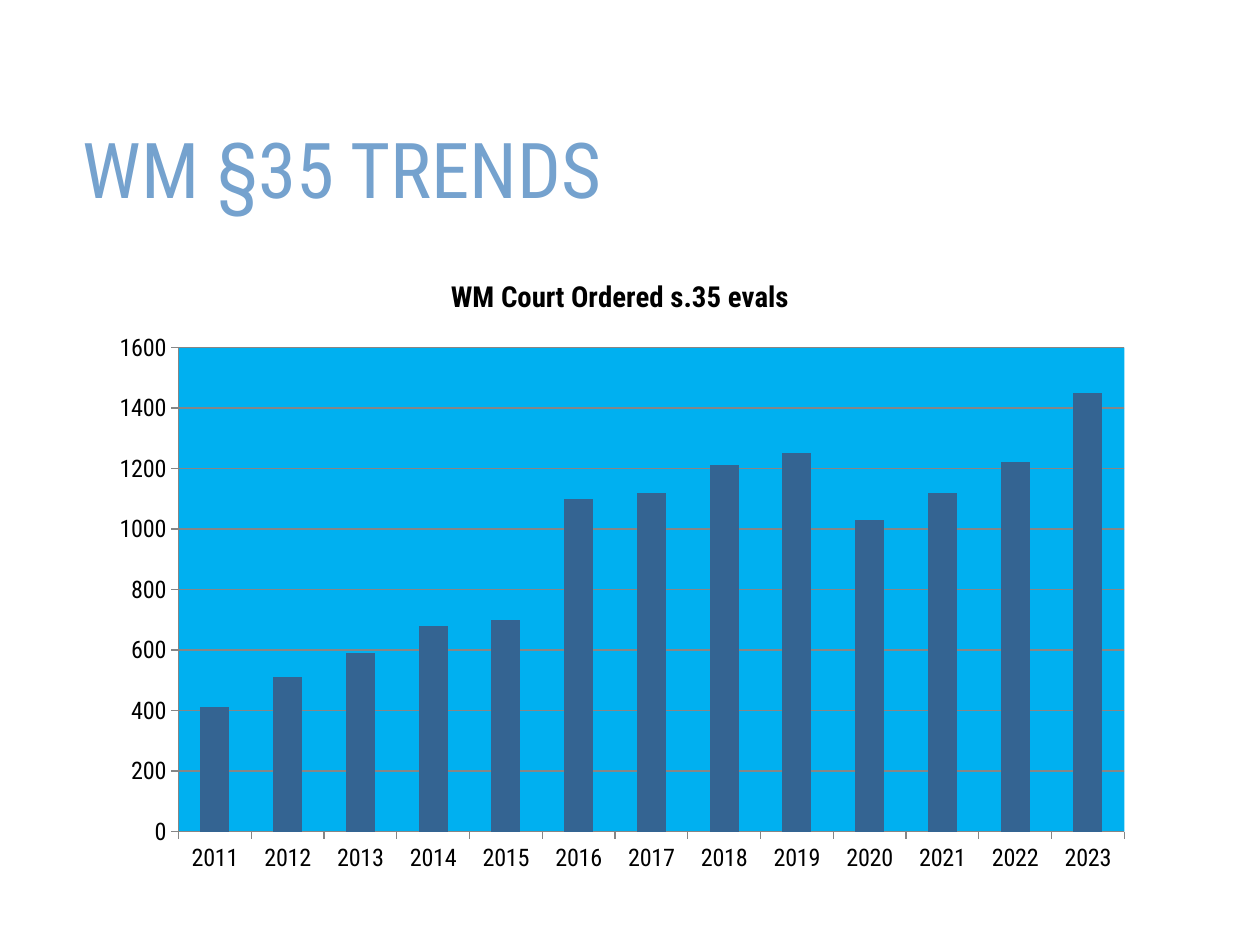
"""Build the WM §35 trends slide with its yearly column chart."""
from dataclasses import dataclass

from lxml import etree
from pptx import Presentation
from pptx.chart.axis import _BaseAxis
from pptx.chart.chart import Chart
from pptx.chart.data import CategoryChartData
from pptx.dml.color import RGBColor
from pptx.enum.chart import XL_CHART_TYPE, XL_TICK_MARK
from pptx.enum.text import MSO_ANCHOR
from pptx.oxml import parse_xml
from pptx.oxml.ns import nsdecls, qn
from pptx.slide import Slide
from pptx.util import Inches, Pt

COLUMNS = XL_CHART_TYPE.COLUMN_CLUSTERED
TICK_OUT = XL_TICK_MARK.OUTSIDE
TICK_NONE = XL_TICK_MARK.NONE
MIDDLE = MSO_ANCHOR.MIDDLE

FONT = "Roboto Condensed"
COLORS = {
    "heading": "75A2CE",
    "text": "000000",
    "plot": "00B0F0",
    "bars": "346492",
    "lines": "868686",
}
FIRST_YEAR = 2011
EVALS = (410, 510, 590, 680, 700, 1100, 1120, 1210, 1250, 1030, 1120, 1220, 1450)
PLOT_LAYOUT = {"x": 0.08, "y": 0.15, "w": 0.9, "h": 0.77}


@dataclass(frozen=True)
class Box:
    left: float
    top: float
    width: float
    height: float

    def lengths(self) -> tuple:
        return tuple(Inches(v) for v in (self.left, self.top, self.width, self.height))


@dataclass(frozen=True)
class TextStyle:
    size: float
    color: str
    bold: bool = False

    def apply(self, font) -> None:
        values = {"name": FONT, "size": Pt(self.size), "bold": self.bold}
        set_values(font, values)
        font.color.rgb = rgb(self.color)


HEADING = TextStyle(44, "heading")
CHART_TITLE = TextStyle(16.5, "text", True)
CHART_TEXT = TextStyle(13.8, "text")


def rgb(key: str) -> RGBColor:
    return RGBColor.from_string(COLORS[key])


def set_values(target, values: dict) -> None:
    for name, value in values.items():
        setattr(target, name, value)


def style_line(line) -> None:
    line.color.rgb = rgb("lines")
    line.width = Pt(0.75)


def add_heading(slide: Slide, text: str, box: Box) -> None:
    frame = slide.shapes.add_textbox(*box.lengths()).text_frame
    set_values(frame, {"word_wrap": True, "vertical_anchor": MIDDLE})
    paragraph = frame.paragraphs[0]
    set_values(paragraph, {"text": text, "line_spacing": 0.9})
    HEADING.apply(paragraph.runs[0].font)


def style_axis(axis: _BaseAxis, values: dict) -> None:
    ticks = {"major_tick_mark": TICK_OUT, "minor_tick_mark": TICK_NONE}
    set_values(axis, ticks | values)
    style_line(axis.format.line)
    CHART_TEXT.apply(axis.tick_labels.font)


def style_plot_area(chart: Chart) -> None:
    area = chart._chartSpace.find(".//" + qn("c:plotArea"))
    for layout in area.findall(qn("c:layout")):
        area.remove(layout)
    layout = etree.Element(qn("c:layout"))
    manual = etree.SubElement(layout, qn("c:manualLayout"))
    modes = {"layoutTarget": "inner", "xMode": "edge", "yMode": "edge"}
    for tag, value in (modes | PLOT_LAYOUT).items():
        etree.SubElement(manual, qn(f"c:{tag}")).set("val", str(value))
    area.insert(0, layout)
    area.append(parse_xml(
        f'<c:spPr {nsdecls("c", "a")}><a:solidFill>'
        f'<a:srgbClr val="{COLORS["plot"]}"/></a:solidFill></c:spPr>'
    ))


def add_trend_chart(slide: Slide, title: str, box: Box) -> None:
    data = CategoryChartData()
    data.categories = [str(FIRST_YEAR + i) for i in range(len(EVALS))]
    data.add_series("Series 1", EVALS)
    chart = slide.shapes.add_chart(COLUMNS, *box.lengths(), data).chart
    set_values(chart, {"has_legend": False, "has_title": True})
    CHART_TEXT.apply(chart.font)

    caption = chart.chart_title.text_frame
    caption.text = title
    CHART_TITLE.apply(caption.paragraphs[0].runs[0].font)

    plot = chart.plots[0]
    set_values(plot, {"gap_width": 150, "vary_by_categories": False})
    bars = plot.series[0].format.fill
    bars.solid()
    bars.fore_color.rgb = rgb("bars")

    style_axis(chart.category_axis, {"has_major_gridlines": False})
    scale = {"minimum_scale": 0, "maximum_scale": 1600, "major_unit": 200}
    style_axis(chart.value_axis, scale | {"has_major_gridlines": True})
    style_line(chart.value_axis.major_gridlines.format.line)
    style_plot_area(chart)


def main() -> None:
    deck = Presentation()
    set_values(deck, {"slide_width": Inches(10), "slide_height": Inches(7.5)})
    slide = deck.slides.add_slide(deck.slide_layouts[6])
    add_heading(slide, "WM §35 TRENDS", Box(0.56, 0.75, 8.53, 1.26))
    add_trend_chart(slide, "WM Court Ordered s.35 evals", Box(0.75, 2.01, 8.34, 4.99))
    deck.save("out.pptx")


if __name__ == "__main__":
    main()
